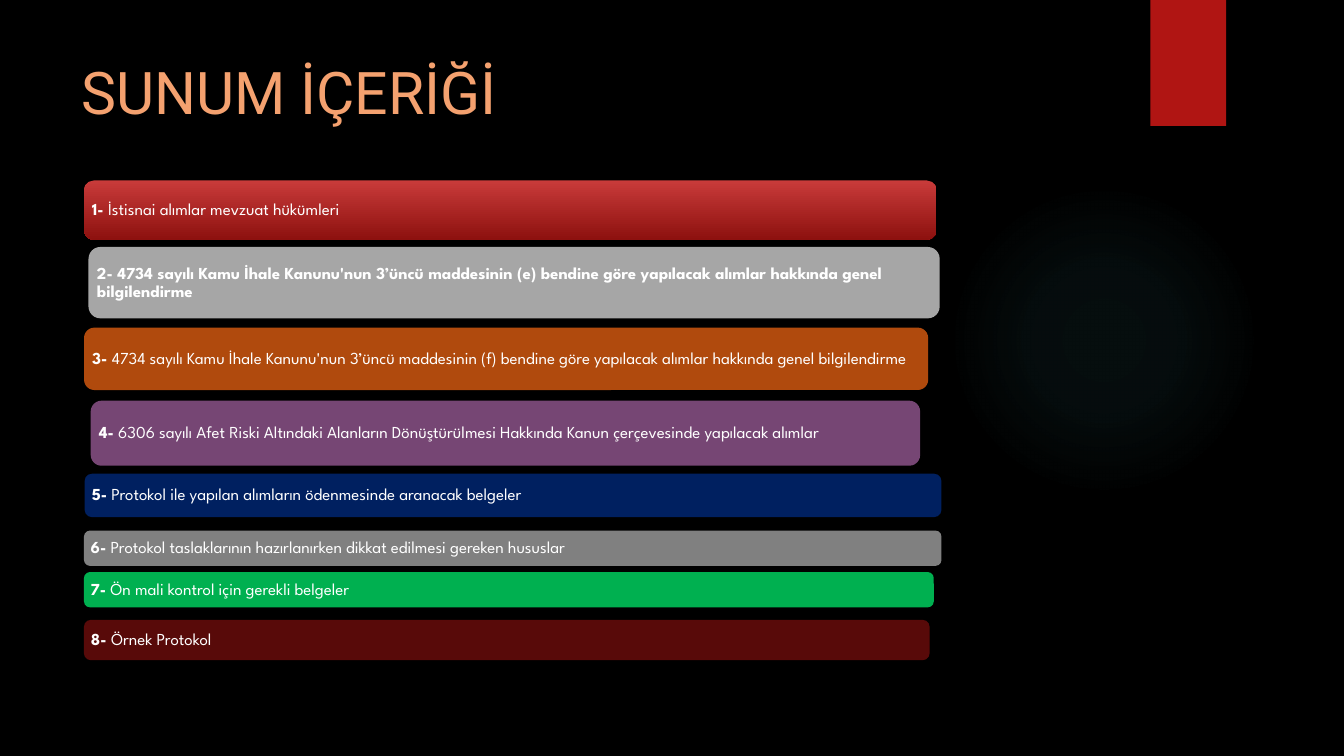
from typing import NamedTuple, Optional

from lxml.etree import fromstring
from pptx import Presentation
from pptx.dml.color import RGBColor
from pptx.enum.shapes import MSO_SHAPE as Kind
from pptx.enum.text import MSO_ANCHOR as Anchor, PP_ALIGN as Align
from pptx.oxml.ns import nsdecls
from pptx.shapes.autoshape import Shape
from pptx.slide import Slide
from pptx.text.text import _Paragraph as Para
from pptx.util import Pt

BLACK = RGBColor(0x00, 0x00, 0x00)
WHITE = RGBColor(0xFF, 0xFF, 0xFF)
PEACH = RGBColor(0xF4, 0xA1, 0x6F)
RED = RGBColor(0xB0, 0x15, 0x13)
ROSE = RGBColor(0xC9, 0x3B, 0x3A)
WINE = RGBColor(0x8D, 0x11, 0x0F)
SILVER = RGBColor(0xA6, 0xA6, 0xA6)
RUST = RGBColor(0xB0, 0x4A, 0x0D)
PLUM = RGBColor(0x76, 0x46, 0x74)
NAVY = RGBColor(0x00, 0x20, 0x60)
GREY = RGBColor(0x80, 0x80, 0x80)
GREEN = RGBColor(0x00, 0xB0, 0x50)
MAROON = RGBColor(0x58, 0x0A, 0x09)
TEAL = RGBColor(0x50, 0xB9, 0xC1)


class Box(NamedTuple):
    left: float
    top: float
    width: float
    height: float


class Bar(NamedTuple):
    box: Box
    fill: RGBColor
    bold: str
    plain: str = ""
    end: Optional[RGBColor] = None


BARS = [
    Bar(Box(60, 128.9, 609, 42.5), ROSE, "1- ",
        "İstisnai alımlar mevzuat hükümleri", WINE),
    Bar(Box(63.2, 176.4, 608, 51), SILVER,
        "2- 4734 sayılı Kamu İhale Kanunu'nun 3’üncü maddesinin (e) bendine "
        "göre yapılacak alımlar hakkında genel bilgilendirme"),
    Bar(Box(60, 234, 603, 44.6), RUST, "3- ",
        "4734 sayılı Kamu İhale Kanunu'nun 3’üncü maddesinin (f) bendine "
        "göre yapılacak alımlar hakkında genel bilgilendirme"),
    Bar(Box(64.8, 286.2, 592.5, 46.5), PLUM, "4-",
        " 6306 sayılı Afet Riski Altındaki Alanların Dönüştürülmesi "
        "Hakkında Kanun çerçevesinde yapılacak alımlar"),
    Bar(Box(60.5, 338.4, 612, 31), NAVY, "5-",
        " Protokol ile yapılan alımların ödenmesinde aranacak belgeler"),
    Bar(Box(60, 379, 612.5, 25.2), GREY, "6-",
        " Protokol taslaklarının hazırlanırken dikkat edilmesi gereken hususlar"),
    Bar(Box(60, 408.6, 607, 25.2), GREEN, "7-",
        " Ön mali kontrol için gerekli belgeler"),
    Bar(Box(60, 442.8, 604, 28.8), MAROON, "8- ", "Örnek Protokol"),
]


def add_run(para: Para, text: str, font: str, size: float,
            color: RGBColor, bold: bool = False) -> None:
    run = para.add_run()
    run.text = text
    run.font.name = font
    run.font.size = Pt(size)
    run.font.bold = bold
    run.font.color.rgb = color


def add_form(slide: Slide, kind: Kind, box: Box, fill: RGBColor) -> Shape:
    form = slide.shapes.add_shape(kind, *map(Pt, box))
    form.shadow.inherit = False
    form.line.fill.background()
    form.fill.solid()
    form.fill.fore_color.rgb = fill
    return form


def add_glow(slide: Slide, box: Box) -> None:
    form = add_form(slide, Kind.OVAL, box, TEAL)
    stops = "".join(
        f'<a:gs pos="{pos * 1000}"><a:srgbClr val="{TEAL}">'
        f'<a:alpha val="{alpha * 1000}"/></a:srgbClr></a:gs>'
        for pos, alpha in [(0, 7), (36, 6), (69, 0)])
    grad = fromstring(
        f'<a:gradFill {nsdecls("a")}><a:gsLst>{stops}</a:gsLst>'
        '<a:path path="circle"><a:fillToRect l="50000" t="50000" '
        'r="50000" b="50000"/></a:path></a:gradFill>')
    props = form.element.spPr
    props.replace(props.find("{*}solidFill"), grad)


def add_title(slide: Slide, box: Box, text: str) -> None:
    frame = slide.shapes.add_textbox(*map(Pt, box)).text_frame
    frame.word_wrap = True
    add_run(frame.paragraphs[0], text, "Roboto", 42, PEACH)


def add_bar(slide: Slide, bar: Bar) -> None:
    form = add_form(slide, Kind.ROUNDED_RECTANGLE, bar.box, bar.fill)
    if bar.end is not None:
        form.fill.gradient()
        form.fill.gradient_angle = 270
        for stop, color in zip(form.fill.gradient_stops, (bar.fill, bar.end)):
            stop.color.rgb = color
    frame = form.text_frame
    frame.word_wrap = True
    frame.vertical_anchor = Anchor.MIDDLE
    frame.margin_left = frame.margin_right = Pt(3.6)
    frame.margin_top = frame.margin_bottom = Pt(3.6)
    para = frame.paragraphs[0]
    para.alignment = Align.LEFT
    para.line_spacing = 0.9
    add_run(para, bar.bold, "League Spartan", 12, WHITE, True)
    if bar.plain:
        add_run(para, bar.plain, "League Spartan", 12, WHITE)


def main() -> None:
    """Build the contents slide and save it."""
    deck = Presentation()
    deck.slide_width, deck.slide_height = Pt(960), Pt(540)
    slide = deck.slides.add_slide(deck.slide_layouts[6])
    slide.background.fill.solid()
    slide.background.fill.fore_color.rgb = BLACK
    add_glow(slide, Box(677.5, 131.8, 221.8, 221.8))
    add_form(slide, Kind.RECTANGLE, Box(821.8, 0, 54, 90), RED)
    add_title(slide, Box(51.2, 36, 741, 110), "SUNUM İÇERİĞİ")
    for bar in BARS:
        add_bar(slide, bar)
    deck.save("out.pptx")


if __name__ == "__main__":
    main()
